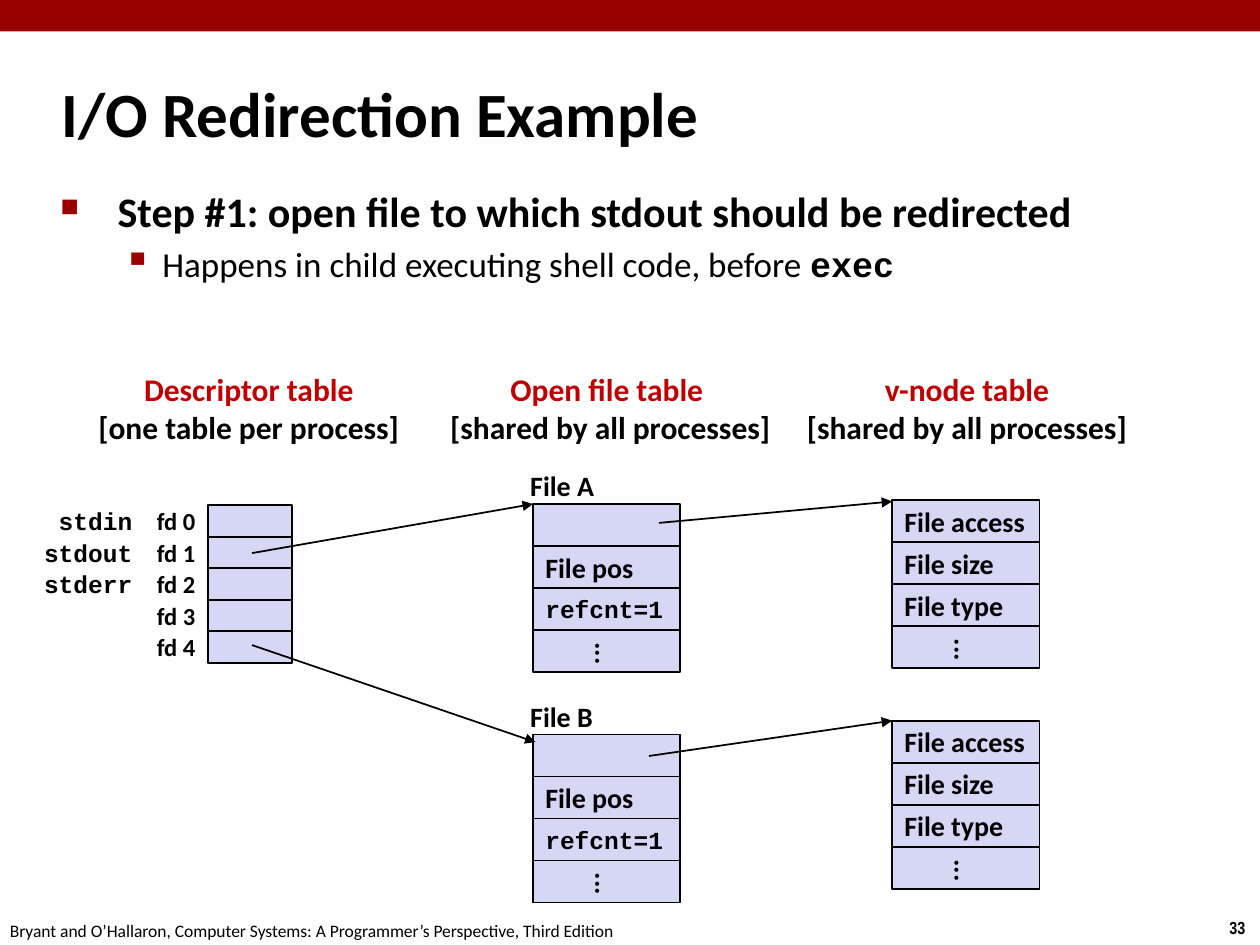
from lxml import etree
from pptx import Presentation
from pptx import util as u
from pptx.dml.color import RGBColor
from pptx.enum import shapes, text
from pptx.oxml import ns

COLORS = {
    "banner": "990000",
    "heading": "C00000",
    "cell": "D6D6F5",
    "ink": "000000",
}
LEFT, CENTER, RIGHT = text.PP_ALIGN.LEFT, text.PP_ALIGN.CENTER, text.PP_ALIGN.RIGHT
CODE = {"name": "Courier New", "size": u.Pt(14)}
LABEL = {"size": u.Pt(16)}
SMALL = {"size": u.Pt(10), "bold": False}
DOTS = "..."
FILE_CELLS = [("", LABEL), ("File pos", LABEL), ("refcnt=1", CODE), (DOTS, LABEL)]
VNODE_CELLS = [(name, LABEL) for name in ("File access", "File size", "File type", DOTS)]


class SlideBuilder:
    def __init__(self, slide):
        self.slide = slide
        self.font = {"name": "Calibri", "size": u.Pt(18), "bold": True}
        self.frame = {
            "word_wrap": False,
            "auto_size": text.MSO_AUTO_SIZE.NONE,
            "vertical_anchor": text.MSO_ANCHOR.MIDDLE,
        }

    def add_child(self, parent, tag, **attributes):
        return etree.SubElement(parent, ns.qn(tag), attributes)

    def format_frame(self, shape, **changes):
        for name, value in {**self.frame, **changes}.items():
            setattr(shape.text_frame, name, value)
        return shape.text_frame

    def run(self, paragraph, content, style=None, color="ink"):
        run = paragraph.add_run()
        run.text = content
        for name, value in {**self.font, **(style or {})}.items():
            setattr(run.font, name, value)
        run.font.color.rgb = RGBColor.from_string(COLORS[color])

    def indent(self, paragraph, margin, hanging):
        properties = paragraph._p.get_or_add_pPr()
        properties.set("marL", str(u.Inches(margin)))
        properties.set("indent", str(u.Inches(-hanging)))
        return properties

    def title(self, box, content):
        shape = self.slide.shapes.title
        shape.left, shape.top, shape.width, shape.height = map(u.Inches, box)
        paragraph = self.format_frame(shape, word_wrap=True).paragraphs[0]
        paragraph.alignment = LEFT
        self.indent(paragraph, 0.13, 0.13)
        self.run(paragraph, content, {"size": u.Pt(36)})

    def textbox(self, box, lines, style=None, align=LEFT):
        shape = self.slide.shapes.add_textbox(*map(u.Inches, box))
        frame = self.format_frame(shape)
        for index, (content, color) in enumerate(lines):
            paragraph = frame.add_paragraph() if index else frame.paragraphs[0]
            paragraph.alignment = align
            self.run(paragraph, content, style, color)

    def label(self, box, content, style=None, align=LEFT):
        self.textbox(box, [(content, "ink")], style, align)

    def bullets(self, box, items):
        shape = self.slide.shapes.add_textbox(*map(u.Inches, box))
        frame = self.format_frame(shape, word_wrap=True, vertical_anchor=text.MSO_ANCHOR.TOP)
        for level, (mark, percent, margin, hanging, space, runs) in enumerate(items):
            paragraph = frame.add_paragraph() if level else frame.paragraphs[0]
            paragraph.level = level
            paragraph.space_before = u.Pt(space)
            properties = self.indent(paragraph, margin, hanging)
            color = self.add_child(properties, "a:buClr")
            self.add_child(color, "a:srgbClr", val=COLORS["banner"])
            self.add_child(properties, "a:buSzPct", val=str(percent * 1000))
            self.add_child(properties, "a:buChar", char=mark)
            for content, style in runs:
                self.run(paragraph, content, style)

    def rectangle(self, box, color, outlined=True):
        shape = self.slide.shapes.add_shape(shapes.MSO_SHAPE.RECTANGLE, *map(u.Inches, box))
        shape.shadow.inherit = False
        shape.fill.solid()
        shape.fill.fore_color.rgb = RGBColor.from_string(COLORS[color])
        if outlined:
            shape.line.color.rgb = RGBColor.from_string(COLORS["ink"])
            shape.line.width = u.Pt(1)
        else:
            shape.line.fill.background()
        return shape

    def stack(self, left, top, width, height, cells):
        for row, (content, style) in enumerate(cells):
            shape = self.rectangle((left, top + row * height, width, height), "cell")
            if content:
                frame = self.format_frame(shape)
                frame.paragraphs[0].alignment = LEFT
                self.run(frame.paragraphs[0], content, style)
            if content == DOTS:
                frame._txBody.bodyPr.set("vert", "eaVert")

    def arrow(self, start, end):
        connector = self.slide.shapes.add_connector(
            shapes.MSO_CONNECTOR.STRAIGHT, *map(u.Inches, start + end))
        connector.line.color.rgb = RGBColor.from_string(COLORS["ink"])
        connector.line.width = u.Pt(1)
        self.add_child(connector.line._get_or_add_ln(), "a:tailEnd", type="triangle")
        self.add_child(connector._element.spPr, "a:effectLst")


def main():
    presentation = Presentation()
    presentation.slide_width, presentation.slide_height = u.Inches(10), u.Inches(7.5)
    builder = SlideBuilder(presentation.slides.add_slide(presentation.slide_layouts[5]))

    builder.rectangle((0, 0, 10, 0.25), "banner", outlined=False)
    builder.label((9.66, 7.23, 0.34, 0.27), "33", {"name": "Arial Narrow", "size": u.Pt(10)})
    builder.label(
        (-0.02, 7.25, 5.08, 0.27),
        "Bryant and O’Hallaron, Computer Systems: A Programmer’s Perspective, Third Edition",
        SMALL)
    builder.title((0.39, 0.48, 8.3, 0.83), "I/O Redirection Example")
    builder.bullets((0.38, 1.42, 9.35, 1.08), [
        ("■", 60, 0.38, 0.38, 4.8, [
            (" Step #1: open file to which stdout should be redirected", {"size": u.Pt(24)})]),
        ("▪", 110, 0.81, 0.31, 4, [
            ("Happens in child executing shell code, before ", {"size": u.Pt(20), "bold": False}),
            ("exec", {"name": "Courier New", "size": u.Pt(20)})]),
    ])

    for left, width, heading, scope in [
        (0.67, 2.61, "Descriptor table", "[one table per process]"),
        (3.46, 2.77, "Open file table ", "[shared by all processes]"),
        (6.29, 2.77, "v-node table", "[shared by all processes]"),
    ]:
        builder.textbox((left, 2.88, width, 0.71),
                        [(heading, "heading"), (scope, "ink")], align=CENTER)

    builder.stack(1.65, 4.01, 0.67, 0.25, [("", LABEL)] * 5)
    for number in range(5):
        builder.label((0.98, 4.01 + number * 0.25, 0.67, 0.25), f"fd {number}",
                      {"size": u.Pt(14)}, RIGHT)
    for row, stream in enumerate(["stdin", "stdout", "stderr"]):
        builder.label((0.25, 3.97 + row * 0.25, 0.9, 0.33), stream, CODE, RIGHT)

    for name, file_top, vnode_top in [("File A", 4, 3.97), ("File B", 5.83, 5.72)]:
        builder.label((4.11, file_top - 0.33, 0.71, 0.37), name, LABEL)
        builder.stack(4.23, file_top, 1.17, 1 / 3, FILE_CELLS)
        builder.stack(7.08, vnode_top, 1.17, 1 / 3, VNODE_CELLS)

    for start, end in [
        ((2, 4.39), (4.23, 4)),
        ((5.23, 4.15), (7.08, 3.98)),
        ((2, 5.12), (4.25, 5.89)),
        ((5.15, 6), (7.08, 5.72)),
    ]:
        builder.arrow(start, end)

    presentation.save("out.pptx")


if __name__ == "__main__":
    main()
